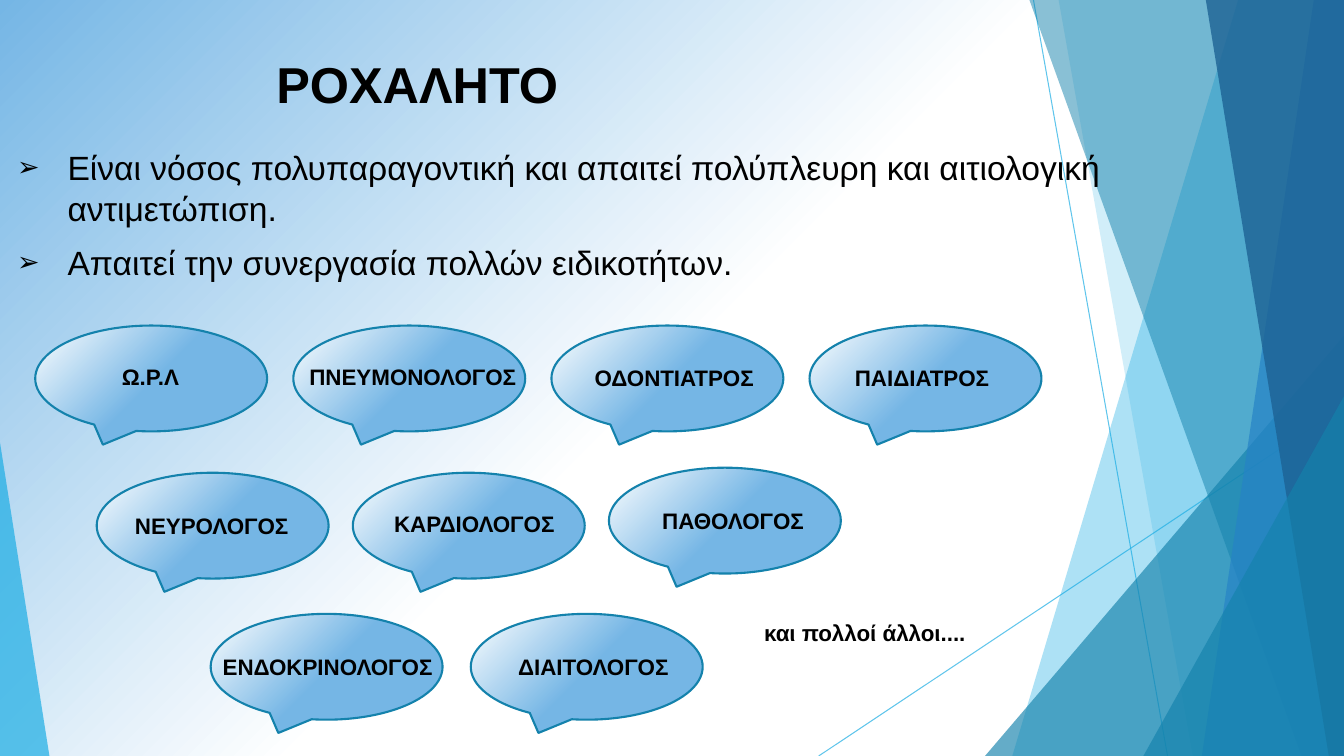
from lxml import etree
from pptx import Presentation
from pptx.dml.color import RGBColor
from pptx.enum.shapes import MSO_CONNECTOR, MSO_SHAPE
from pptx.enum.text import MSO_ANCHOR, MSO_AUTO_SIZE, PP_ALIGN
from pptx.oxml.ns import qn
from pptx.util import Pt

LINE = MSO_CONNECTOR.STRAIGHT
BUBBLE = MSO_SHAPE.OVAL_CALLOUT
TRIANGLE = MSO_SHAPE.ISOSCELES_TRIANGLE
TOP, LEFT = MSO_ANCHOR.TOP, PP_ALIGN.LEFT
GROW, FIXED = MSO_AUTO_SIZE.SHAPE_TO_FIT_TEXT, MSO_AUTO_SIZE.NONE

PX = 9144  # 100 px to the inch
WIDE, HIGH = 1333, 750
SKY, TEAL, BLUE, NAVY = "1CADE4", "1482AC", "2683C6", "1D6294"
PALE, WHITE, BLACK = "75B6E5", "FFFFFF", "000000"

TITLE = "ΡΟΧΑΛΗΤΟ"
POINTS = [
    "Είναι νόσος πολυπαραγοντική και απαιτεί πολύπλευρη και αιτιολογική αντιμετώπιση.",
    "Απαιτεί την συνεργασία πολλών ειδικοτήτων.",
]
# Left, step, and the bubbles of each row: top, label, label left, top, width
ROWS = [
    (35, 256, [(323, "Ω.Ρ.Λ", 111, 355, 78),
               (323, "ΠΝΕΥΜΟΝΟΛΟΓΟΣ", 297, 355, 228),
               (323, "ΟΔΟΝΤΙΑΤΡΟΣ", 580, 356, 180),
               (323, "ΠΑΙΔΙΑΤΡΟΣ", 838, 356, 155)]),
    (96, 254, [(469, "ΝΕΥΡΟΛΟΓΟΣ", 124, 503, 174),
               (469, "ΚΑΡΔΙΟΛΟΓΟΣ", 381, 501, 181),
               (464, "ΠΑΘΟΛΟΓΟΣ", 647, 498, 163)]),
    (209, 258, [(609, "ΕΝΔΟΚΡΙΝΟΛΟΓΟΣ", 211, 643, 231),
                (609, "ΔΙΑΙΤΟΛΟΓΟΣ", 504, 643, 172)]),
]


def px(*nums):
    return [round(n * PX) for n in nums]


def color(code):
    return RGBColor.from_string(code)


def fade(part, pct):
    tint = part.find(".//" + qn("a:srgbClr"))
    etree.SubElement(tint, qn("a:alpha"), val=str(pct * 1000))


def blend(fill, stops):
    fill.gradient()
    for stop, (place, code) in zip(fill.gradient_stops, stops):
        stop.position = place
        stop.color.rgb = color(code)


def backdrop(slide):
    blend(slide.background.fill, [(0.5, WHITE), (1, PALE)])
    lin = slide._element.find(".//" + qn("a:lin"))
    path = etree.Element(qn("a:path"), {"path": "circle"})
    etree.SubElement(path, qn("a:fillToRect"), l="100000", t="100000")
    lin.getparent().replace(lin, path)


def ray(slide, *ends):
    line = slide.shapes.add_connector(LINE, *px(*ends))
    line.line.color.rgb = color(SKY)
    line.line.width = Pt(0.75)
    props = line._element.spPr
    fade(props, 70)
    etree.SubElement(props, qn("a:effectLst"))


def glass(shape, code, pct):
    shape.shadow.inherit = False
    shape.fill.solid()
    shape.fill.fore_color.rgb = color(code)
    fade(shape._element.spPr, pct)
    shape.line.fill.background()


def facet(slide, top, base, code, pct):
    """Pane from a slanted left edge to the right side of the slide."""
    pen = slide.shapes.build_freeform(top, 0, scale=PX)
    pen.add_line_segments([(WIDE, 0), (WIDE, HIGH), (base, HIGH)])
    glass(pen.convert_to_shape(), code, pct)


def wedge(slide, left, top, width, tip, code, pct):
    shape = slide.shapes.add_shape(TRIANGLE, *px(left, top, width, HIGH - top))
    shape.adjustments[0] = tip
    glass(shape, code, pct)


def style(para, size, bold=False):
    para.alignment = LEFT
    font = para.font
    font.name, font.size, font.bold = "Arial", Pt(size), bold
    font.color.rgb = color(BLACK)


def holder(slide, index, box, text):
    shape = slide.placeholders[index]
    shape.left, shape.top, shape.width, shape.height = px(*box)
    slide.shapes._spTree.append(shape._element)  # bring to front
    frame = shape.text_frame
    frame.text = text
    frame.auto_size, frame.vertical_anchor = FIXED, TOP
    return frame


def bullet(para):
    style(para, 24)
    para.space_before = Pt(10)
    props = para._p.get_or_add_pPr()
    props.set("marL", str(50 * PX))
    props.set("indent", str(-50 * PX))
    etree.SubElement(props, qn("a:buSzPct"), val="80000")
    etree.SubElement(props, qn("a:buChar"), char="➢")


def bubble(slide, left, top):
    shape = slide.shapes.add_shape(BUBBLE, *px(left, top, 230, 105))
    shape.shadow.inherit = False
    blend(shape.fill, [(0, WHITE), (0.52, PALE)])
    shape.fill.gradient_angle = 315
    shape.line.color.rgb = color(TEAL)
    shape.line.width = Pt(1.5)


def label(slide, text, left, top, width):
    frame = slide.shapes.add_textbox(*px(left, top, width, 37)).text_frame
    frame.word_wrap = False
    frame.auto_size = GROW
    frame.text = text
    style(frame.paragraphs[0], 16, True)


def main():
    deck = Presentation()
    deck.slide_width, deck.slide_height = px(WIDE, HIGH)
    slide = deck.slides.add_slide(deck.slide_layouts[1])

    # Background and glass panes
    backdrop(slide)
    ray(slide, 1025, 0, 1158, HIGH)
    ray(slide, WIDE, 403, 812, HIGH)
    facet(slide, 1228, 1004, SKY, 36)
    facet(slide, 1050, 1183, SKY, 20)
    wedge(slide, 977, 333, 356, 1, TEAL, 66)
    facet(slide, 1021, 1291, TEAL, 50)
    facet(slide, 1303, 1192, BLUE, 70)
    facet(slide, 1196, 1318, NAVY, 80)
    wedge(slide, 1134, 393, 199, 1, TEAL, 66)
    wedge(slide, 0, 439, 49, 0, SKY, 70)

    # Title and list
    title = holder(slide, 0, (264, 48, 429, 94), TITLE)
    style(title.paragraphs[0], 36, True)
    body = holder(slide, 1, (7, 141, 1165, 286), "\n".join(POINTS))
    for para in body.paragraphs:
        bullet(para)

    # Specialists
    for left, step, row in ROWS:
        for i, (top, *note) in enumerate(row):
            bubble(slide, left + i * step, top)
            label(slide, *note)
    label(slide, "και πολλοί άλλοι....", 748, 609, 223)

    deck.save("out.pptx")


if __name__ == "__main__":
    main()
